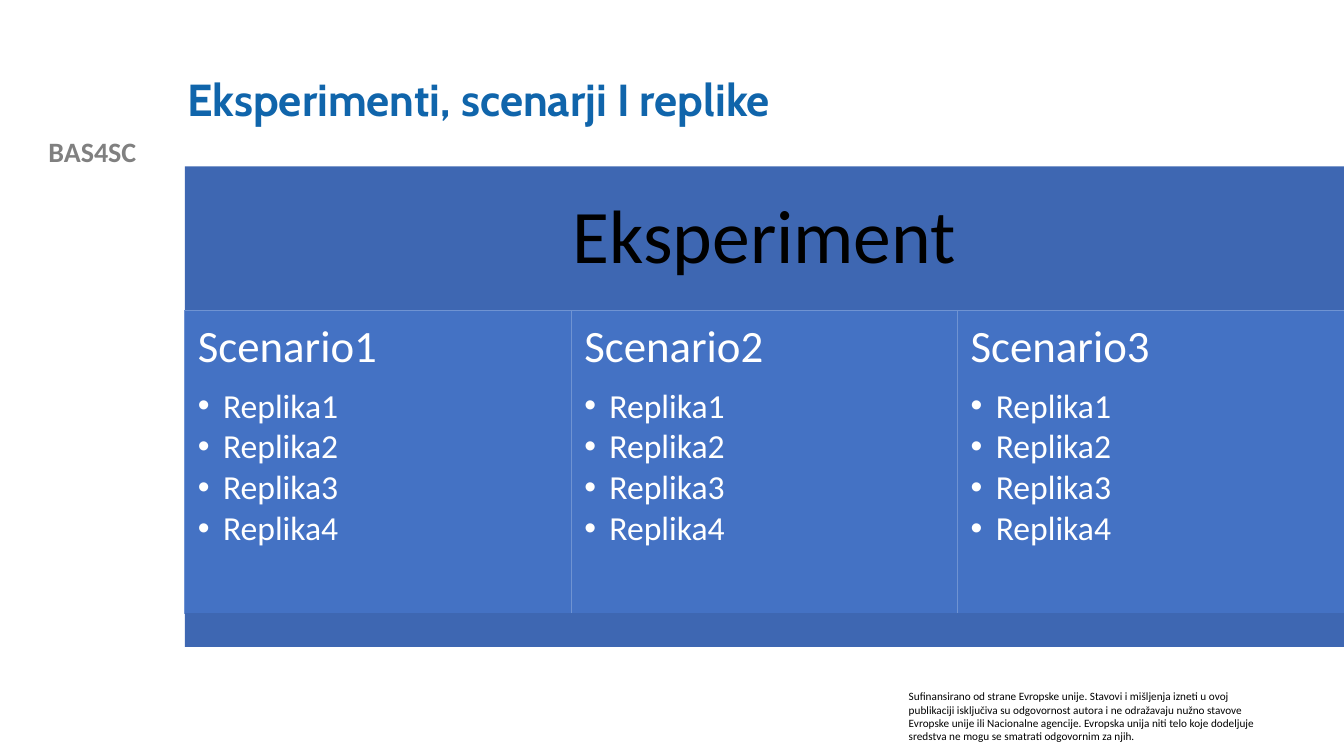
from lxml import etree
from pptx import Presentation
from pptx.dml.color import RGBColor as RGB
from pptx.enum.shapes import MSO_SHAPE as Shape
from pptx.enum.text import MSO_ANCHOR as Anchor, PP_ALIGN as Align
from pptx.oxml.ns import qn
from pptx.util import Inches, Pt

COLORS = {
    "title": "1065AB",
    "label": "808080",
    "band": "3E67B2",
    "card": "4472C4",
    "edge": "6F93D2",
    "black": "000000",
    "white": "FFFFFF",
}
COLS, ROWS = 160, 90


class Deck:
    def __init__(self, font="Calibri"):
        self.font = font
        self.prs = Presentation()
        self.prs.slide_width = Inches(13.33)
        self.prs.slide_height = Inches(7.5)
        self.s = self.prs.slides.add_slide(self.prs.slide_layouts[6])

    def grid(self, col, row, cols, rows):
        w, h = self.prs.slide_width / COLS, self.prs.slide_height / ROWS
        return [round(v) for v in (col * w, row * h, cols * w, rows * h)]

    def frame(self, sp, inset=None, anchor=Anchor.TOP):
        tf = sp.text_frame
        tf.word_wrap = True
        tf.vertical_anchor = anchor
        if inset:
            tf.margin_left = tf.margin_right = Inches(inset)
            tf.margin_top = tf.margin_bottom = Inches(inset)
        return tf

    def style(self, p, size, color, font=None, bold=False,
              align=Align.LEFT, spacing=1.0, after=0):
        p.alignment = align
        p.line_spacing = spacing
        p.space_after = Pt(after)
        for r in p.runs:
            r.font.name = font or self.font
            r.font.size = Pt(size)
            r.font.bold = bold
            r.font.color.rgb = RGB.from_string(COLORS[color])

    def text(self, area, text, size, color, anchor=Anchor.TOP, **look):
        tf = self.frame(self.s.shapes.add_textbox(*self.grid(*area)), anchor=anchor)
        tf.text = text
        self.style(tf.paragraphs[0], size, color, **look)

    def box(self, area, fill, edge=None):
        sp = self.s.shapes.add_shape(Shape.RECTANGLE, *self.grid(*area))
        sp.shadow.inherit = False
        sp.fill.solid()
        sp.fill.fore_color.rgb = RGB.from_string(COLORS[fill])
        if edge:
            sp.line.color.rgb = RGB.from_string(COLORS[edge])
            sp.line.width = Pt(0.5)
        else:
            sp.line.fill.background()
        return sp

    def header(self, area, text):
        tf = self.frame(self.box(area, "band"), 0.23, Anchor.MIDDLE)
        tf.text = text
        self.style(tf.paragraphs[0], 54, "black", align=Align.CENTER, spacing=0.9)

    def bullet(self, p, indent=0.25):
        pPr = p._p.get_or_add_pPr()
        pPr.set("marL", str(Inches(indent)))
        pPr.set("indent", str(-Inches(indent)))
        etree.SubElement(pPr, qn("a:buFont")).set("typeface", "Arial")
        etree.SubElement(pPr, qn("a:buChar")).set("char", "•")

    def card(self, area, heading, items):
        tf = self.frame(self.box(area, "card", "edge"), 0.13)
        tf.text = heading
        self.style(tf.paragraphs[0], 32, "white", spacing=0.9, after=12)
        for item in items:
            p = tf.add_paragraph()
            p.text = item
            self.bullet(p)
            self.style(p, 24, "white", spacing=0.9, after=3.2)


def main():
    deck = Deck()
    deck.text((0, 15.4, 22, 5.2), "BAS4SC", 20, "label",
              bold=True, align=Align.CENTER)
    deck.text((107, 81.5, 44.9, 7.7),
              "Sufinansirano od strane Evropske unije. Stavovi i mišljenja izneti "
              "u ovoj publikaciji isključiva su odgovornost autora i ne odražavaju "
              "nužno stavove Evropske unije ili Nacionalne agencije. Evropska unija "
              "niti telo koje dodeljuje sredstva ne mogu se smatrati odgovornim za njih.",
              8, "black")
    deck.text((21.1, 4.8, 128, 14.6), "Eksperimenti, scenarji I replike", 32, "title",
              anchor=Anchor.MIDDLE, font="Cabin", bold=True, spacing=0.9)

    left, width, count = 22, 138, 3
    deck.header((left, 19.8, width, 17.2), "Eksperiment")
    replicas = [f"Replika{n}" for n in range(1, 5)]
    step = width / count
    for i in range(count):
        deck.card((left + i * step, 37, step, 36), f"Scenario{i + 1}", replicas)
    deck.box((left, 73, width, 4), "band")
    deck.prs.save("out.pptx")


if __name__ == "__main__":
    main()
